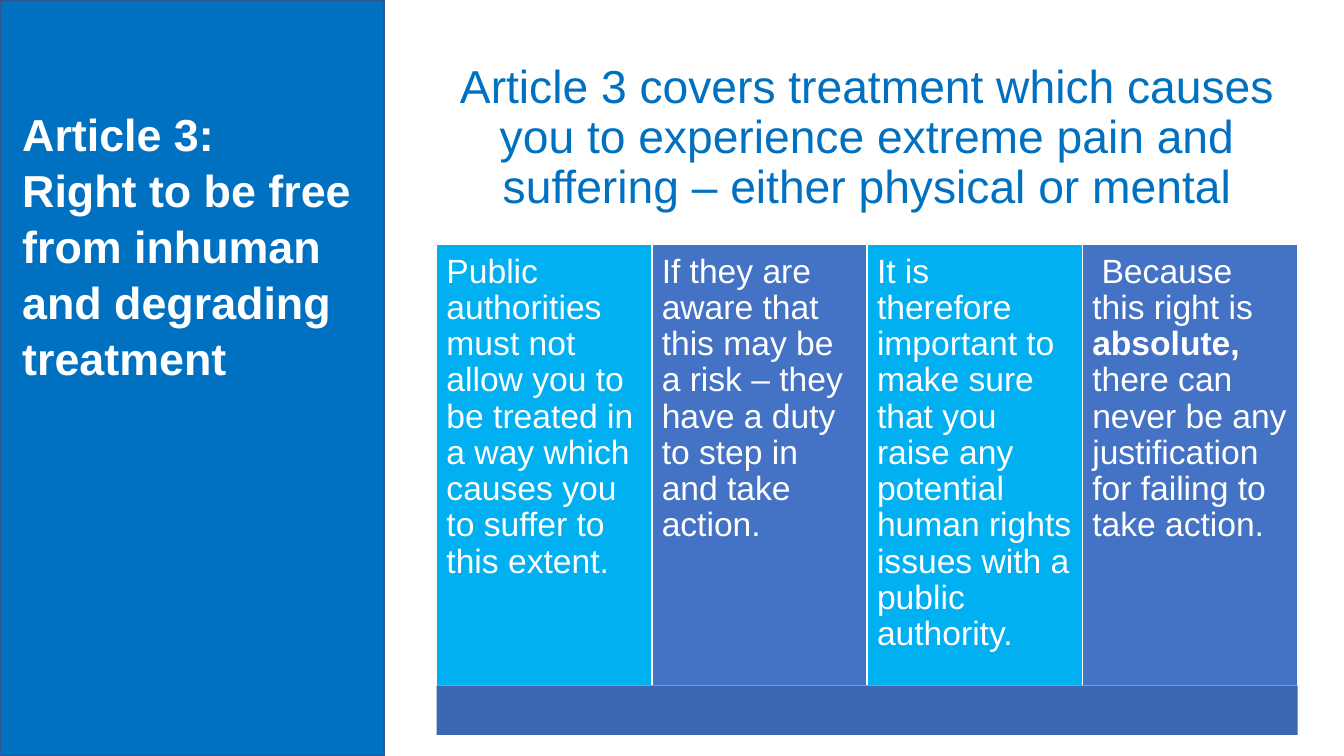
import pptx
import pptx.dml.color
import pptx.enum.shapes
import pptx.enum.text
import pptx.util

PX = 9144  # 100 px to the inch
FONT = "Arial"
WHITE, BLUE, SKY, INDIGO = "FFFFFF", "0070C0", "00B0F0", "4472C4"
ALIGN = pptx.enum.text.PP_ALIGN
ANCHOR = pptx.enum.text.MSO_ANCHOR

TITLE = ["Article 3:", "Right to be free from inhuman and degrading treatment"]
HEADING = ("Article 3 covers treatment which causes you to experience "
           "extreme pain and suffering – either physical or mental")
# Each column is a list of (text, bold) runs
COLUMNS = [
    [("Public authorities must not allow you to be treated in a way which "
      "causes you to suffer to this extent.", False)],
    [("If they are aware that this may be a risk – they have a duty to step "
      "in and take action.", False)],
    [("It is therefore important to make sure that you raise any potential "
      "human rights issues with a public authority.", False)],
    [(" Because this right is ", False), ("absolute, ", True),
     ("there can never be any justification for failing to take action.", False)],
]


def px(length):
    return pptx.util.Emu(round(length * PX))


def colour(value):
    return pptx.dml.color.RGBColor.from_string(value)


def add_rectangle(page, box, fill, line=None):
    shape = page.shapes.add_shape(
        pptx.enum.shapes.MSO_SHAPE.RECTANGLE, *(px(side) for side in box))
    shape.shadow.inherit = False
    shape.fill.solid()
    shape.fill.fore_color.rgb = colour(fill)
    if line:
        shape.line.color.rgb = colour(line)
        shape.line.width = pptx.util.Pt(1)
    else:
        shape.line.fill.background()
    return shape


def write(shape, paragraphs, size, ink, align, anchor, spacing, insets):
    frame = shape.text_frame
    frame.word_wrap = True
    frame.auto_size = pptx.enum.text.MSO_AUTO_SIZE.NONE
    frame.vertical_anchor = anchor
    frame.margin_left = frame.margin_right = px(insets[0])
    frame.margin_top = frame.margin_bottom = px(insets[1])
    for index, runs in enumerate(paragraphs):
        para = frame.add_paragraph() if index else frame.paragraphs[0]
        para.alignment = align
        para.line_spacing = spacing
        for text, bold in runs:
            span = para.add_run()
            span.text = text
            span.font.name = FONT
            span.font.size = pptx.util.Pt(size)
            span.font.bold = bold
            span.font.color.rgb = colour(ink)


def add_sidebar(page, box):
    left, top, width, height = box
    panel = add_rectangle(page, box, BLUE, "325491")
    title = page.shapes.title
    title.element.addprevious(panel.element)  # panel goes behind the title
    title.left, title.top = px(left + 12), px(top + 99)
    title.width, title.height = px(width - 7), px(333)
    write(title, [[(line, True)] for line in TITLE], 32, WHITE,
          ALIGN.LEFT, ANCHOR.TOP, 1.04, (10, 5))


def add_content(page, box):
    left, top, width, height = box
    heading_height, base_height = 209, 49
    column_height = height - heading_height - base_height
    column_width = width / len(COLUMNS)

    # Heading
    heading = add_rectangle(page, (left, top, width, heading_height), WHITE)
    write(heading, [[(HEADING, False)]], 33, BLUE,
          ALIGN.CENTER, ANCHOR.MIDDLE, 0.9, (14, 14))

    # Columns in alternating colours
    for index, runs in enumerate(COLUMNS):
        column = add_rectangle(
            page, (left + index * column_width, top + heading_height,
                   column_width, column_height),
            (SKY, INDIGO)[index % 2], WHITE)
        write(column, [runs], 24, WHITE, ALIGN.LEFT, ANCHOR.TOP, 0.9, (10, 10))

    # Base bar
    add_rectangle(page, (left, top + height - base_height, width, base_height),
                  "3E67B2")


def main():
    deck = pptx.Presentation()
    deck.slide_width, deck.slide_height = px(1333), px(750)
    page = deck.slides.add_slide(deck.slide_layouts.get_by_name("Title Only"))
    add_sidebar(page, (0, 0, 381, 750))
    add_content(page, (433, 33, 854, 696))
    deck.save("out.pptx")


if __name__ == "__main__":
    main()
